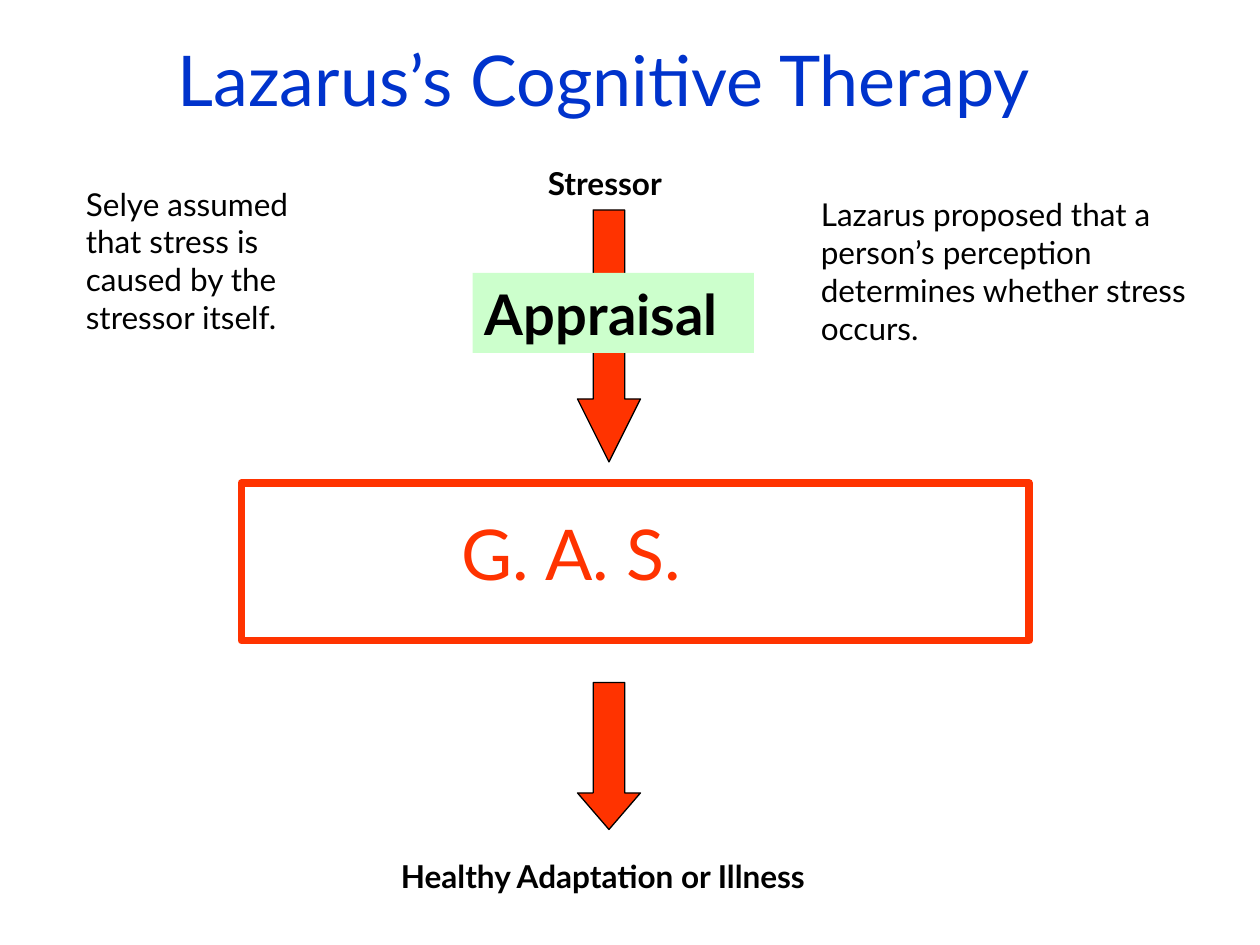
from pptx import Presentation
from pptx.dml.color import RGBColor
from pptx.enum.shapes import MSO_SHAPE
from pptx.enum.text import MSO_ANCHOR, PP_ALIGN
from pptx.util import Inches, Pt

FONT = "Lato"
COLS, ROWS = 120, 90  # grid over the slide
INK = {"title": "0033CC", "red": "FF3300", "green": "CCFFCC", "black": "000000"}

deck = Presentation()
deck.slide_width, deck.slide_height = Inches(10), Inches(7.5)
slide = deck.slides.add_slide(deck.slide_layouts[6])


def grid(x, y, w, h):
    """Turn columns and rows into lengths."""
    col, row = deck.slide_width / COLS, deck.slide_height / ROWS
    return int(x * col), int(y * row), int(w * col), int(h * row)


def write(box, text, size=18, color="black", bold=False, inset=0.1,
          align=PP_ALIGN.LEFT, anchor=MSO_ANCHOR.TOP, fill=None):
    item = slide.shapes.add_textbox(*grid(*box))
    if fill:
        item.fill.solid()
        item.fill.fore_color.rgb = RGBColor.from_string(INK[fill])
    frame = item.text_frame
    frame.word_wrap = True
    frame.margin_left = Inches(inset)
    frame.vertical_anchor = anchor
    frame.text = text
    for para in frame.paragraphs:
        para.alignment = align
        font = para.font
        font.name, font.size, font.bold = FONT, Pt(size), bold
        font.color.rgb = RGBColor.from_string(INK[color])


def draw(kind, box, line, width, fill=None):
    item = slide.shapes.add_shape(kind, *grid(*box))
    item.shadow.inherit = False
    if fill:
        item.fill.solid()
        item.fill.fore_color.rgb = RGBColor.from_string(INK[fill])
    else:
        item.fill.background()
    item.line.color.rgb = RGBColor.from_string(INK[line])
    item.line.width = Pt(width)
    return item


def arrow(x, y, high, head):
    item = draw(MSO_SHAPE.DOWN_ARROW, (x, y, 6, high), "black", 0.75, "red")
    item.adjustments[0], item.adjustments[1] = 0.5, head


def title(x, y, w, h):
    write((x, y, w, h), "Lazarus’s Cognitive Therapy", size=40, color="title",
          align=PP_ALIGN.CENTER, anchor=MSO_ANCHOR.MIDDLE)


def flow(x, y, w, h):
    """Stressor, appraisal, syndrome and outcome, from top to bottom."""
    mid = x + 32  # left edge of both arrows
    write((mid - 4, y, 15, 4.8), "Stressor", bold=True)
    arrow(mid, y + 5, 24, 1)
    write((mid - 10, y + 11, 26.8, 7.6), "Appraisal", size=32, bold=True, fill="green")
    # Framed syndrome
    draw(MSO_SHAPE.RECTANGLE, (x, y + 31, w, 15), "red", 4.5)
    write((x + 6, y + 33, 49, 9.2), "G. A. S.", size=40, color="red", inset=1.25)
    # Outcome
    arrow(mid, y + 50, 14, 0.58)
    write((x + 14, y + h - 4.8, 58, 4.8), "Healthy Adaptation or Illness", bold=True)


def notes(x, y, w, h):
    """One view on each side of the flow."""
    write((x, y, 27, h - 1),
          "Selye assumed\nthat stress is caused by the stressor itself.")
    write((x + w - 38, y + 1, 38, h - 1),
          "Lazarus proposed that a person’s perception determines whether stress occurs.")


title(14, 0, 87, 15)
flow(23, 15, 75, 70.8)
notes(7, 17, 108, 16.7)
deck.save("out.pptx")
